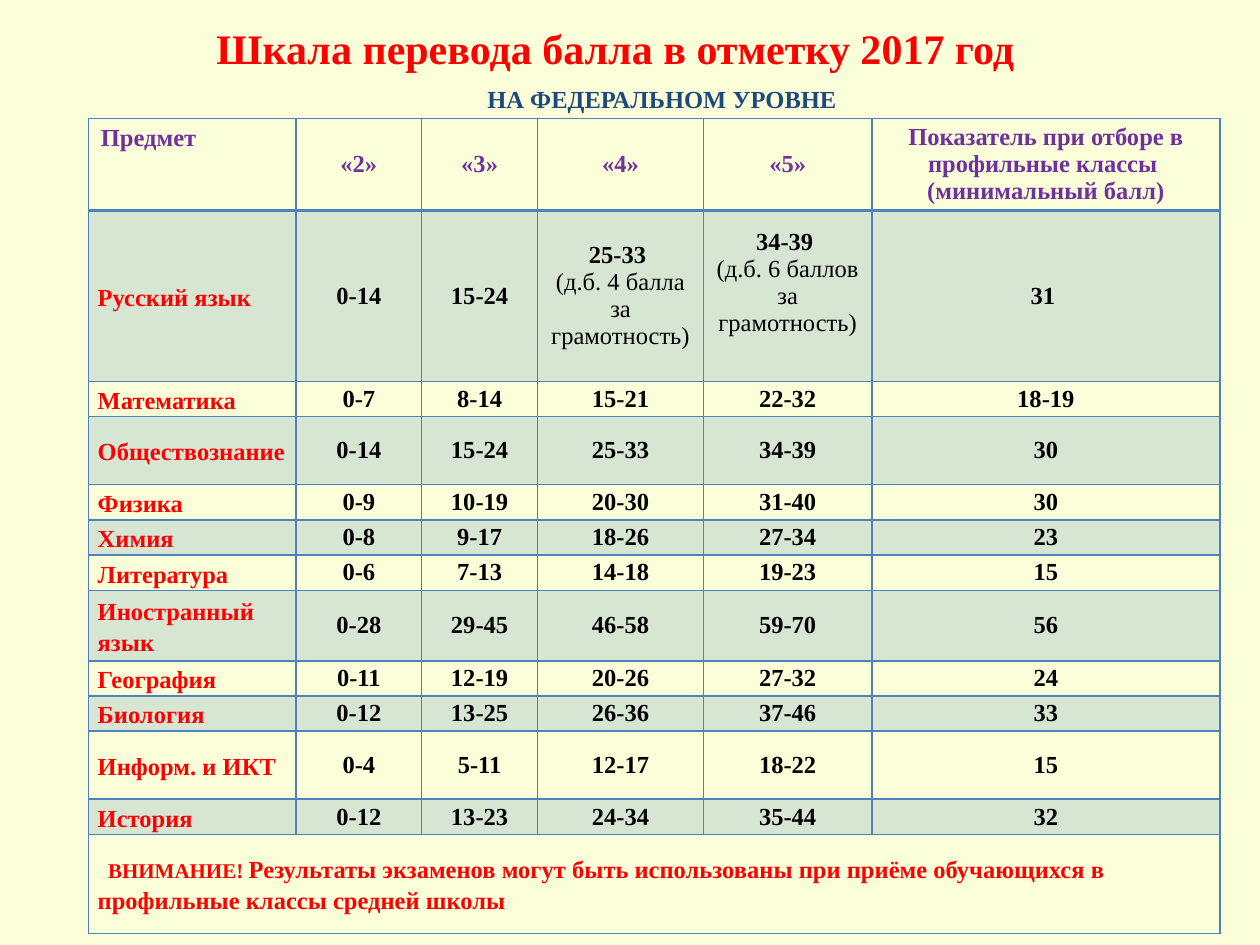
from lxml.etree import SubElement
from pptx import Presentation
from pptx.dml.color import RGBColor
from pptx.enum.text import MSO_ANCHOR, PP_ALIGN
from pptx.oxml.ns import qn
from pptx.util import Cm, Pt

FONT = "Times New Roman"
CREAM = RGBColor(0xFA, 0xFF, 0xD9)
RED = RGBColor(0xFF, 0x00, 0x00)
NAVY = RGBColor(0x1F, 0x49, 0x7D)
PURPLE = RGBColor(0x70, 0x30, 0xA0)
BLUE = RGBColor(0x4F, 0x81, 0xBD)
BLACK = RGBColor(0x00, 0x00, 0x00)

# Content: a cell is one string, or a tuple of paragraphs
TITLE = "Шкала перевода балла в отметку 2017 год"
SUBTITLE = "НА ФЕДЕРАЛЬНОМ УРОВНЕ"
HEADER = ["Предмет", "«2»", "«3»", "«4»", "«5»",
          ("Показатель при отборе в профильные классы ", "(минимальный балл)")]
SUBJECTS = [
    ["Русский язык", "0-14", "15-24",
     ("25-33 ", "(д.б. 4 балла за грамотность)"),
     ("34-39 ", "(д.б. 6 баллов за грамотность)"), "31 "],
    ["Математика", "0-7", "8-14", "15-21", "22-32", "18-19"],
    ["Обществознание", "0-14", "15-24", "25-33", "34-39", "30"],
    ["Физика", "0-9", "10-19", "20-30", "31-40", "30"],
    ["Химия", "0-8", "9-17", "18-26", "27-34", "23"],
    ["Литература", "0-6", "7-13", "14-18", "19-23", "15"],
    ["Иностранный язык", "0-28", "29-45", "46-58", "59-70", "56"],
    ["География", "0-11", "12-19", "20-26", "27-32", "24"],
    ["Биология", "0-12", "13-25", "26-36", "37-46", "33"],
    ["Информ. и ИКТ", "0-4", "5-11", "12-17", "18-22", "15"],
    ["История", "0-12", "13-23", "24-34", "35-44", "32"],
]
WARNING = "ВНИМАНИЕ! "
NOTE = ("Результаты экзаменов могут быть использованы при приёме обучающихся "
        "в профильные классы средней школы")

# Sizes in centimetres
COLUMN_WIDTHS = [4.19, 2.53, 2.34, 3.34, 3.4, 7.01]
SINGLE, DOUBLE = 0.71, 1.37
ROW_HEIGHTS = [1.85, 3.45, SINGLE, DOUBLE, SINGLE, SINGLE, SINGLE, 1.42,
               SINGLE, SINGLE, DOUBLE, SINGLE, 2]


def add_run(paragraph, text, color, size=14, bold=True):
    run = paragraph.add_run()
    run.text = text
    run.font.name = FONT
    run.font.size = Pt(size)
    run.font.bold = bold
    run.font.color.rgb = color


def add_heading(slide, text, box, size, color, anchor):
    frame = slide.shapes.add_textbox(*map(Cm, box)).text_frame
    frame.word_wrap = True
    frame.vertical_anchor = anchor
    paragraph = frame.paragraphs[0]
    paragraph.alignment = PP_ALIGN.CENTER
    add_run(paragraph, text, color, size)


def style_cell(cell, banded, bottom_width):
    properties = cell._tc.get_or_add_tcPr()
    for side, width in (("L", 1), ("R", 1), ("T", 1), ("B", bottom_width)):
        line = SubElement(properties, qn(f"a:ln{side}"), w=str(Pt(width)))
        fill = SubElement(line, qn("a:solidFill"))
        SubElement(fill, qn("a:srgbClr"), val=str(BLUE))
    if banded:
        cell.fill.solid()
        cell.fill.fore_color.rgb = BLUE
        color = properties.find(qn("a:solidFill")).find(qn("a:srgbClr"))
        SubElement(color, qn("a:alpha"), val="20000")
    else:
        cell.fill.background()


def set_margins(cell, side):
    cell.vertical_anchor = MSO_ANCHOR.MIDDLE
    cell.margin_left = cell.margin_right = Cm(side)
    cell.margin_top = cell.margin_bottom = 0


def fill_cell(cell, content, color, centred):
    paragraphs = (content,) if isinstance(content, str) else content
    frame = cell.text_frame
    for index, text in enumerate(paragraphs):
        paragraph = frame.add_paragraph() if index else frame.paragraphs[0]
        if centred:
            paragraph.alignment = PP_ALIGN.CENTER
        # The remark under a score is not bold
        add_run(paragraph, text, color, bold=index == 0 or color == PURPLE)


def main():
    presentation = Presentation()
    presentation.slide_width, presentation.slide_height = Cm(25.4), Cm(19.05)
    slide = presentation.slides.add_slide(presentation.slide_layouts[6])
    slide.background.fill.solid()
    slide.background.fill.fore_color.rgb = CREAM

    # Headings
    add_heading(slide, TITLE, (1.19, 0.41, 22.43, 1.19), 24, RED, MSO_ANCHOR.BOTTOM)
    add_heading(slide, SUBTITLE, (7.92, 1.57, 10.85, 0.86), 14, NAVY, MSO_ANCHOR.TOP)

    # Table grid
    table = slide.shapes.add_table(
        len(ROW_HEIGHTS), len(COLUMN_WIDTHS), Cm(1.78), Cm(2.39),
        Cm(sum(COLUMN_WIDTHS)), Cm(sum(ROW_HEIGHTS))).table
    table.first_row = table.horz_banding = False
    for column, width in zip(table.columns, COLUMN_WIDTHS):
        column.width = Cm(width)
    for row_index, (row, height) in enumerate(zip(table.rows, ROW_HEIGHTS)):
        row.height = Cm(height)
        for cell in row.cells:
            banded = row_index % 2 == 1
            style_cell(cell, banded, 2 if row_index == 0 else 1)

    # Header and subject rows
    for row_index, values in enumerate([HEADER] + SUBJECTS):
        for column_index, content in enumerate(values):
            cell = table.cell(row_index, column_index)
            is_subject = column_index == 0
            if row_index == 0:
                color = PURPLE
            else:
                color = RED if is_subject else BLACK
            fill_cell(cell, content, color, not is_subject)
            if not is_subject:
                set_margins(cell, 0.1)
            elif row_index > 0:
                set_margins(cell, 0.19)
                cell.text_frame.paragraphs[0].line_spacing = 1.15
    table.cell(1, 4).margin_bottom = Cm(0.54)

    # Note across the whole last row
    last = len(ROW_HEIGHTS) - 1
    note = table.cell(last, 0)
    note.merge(table.cell(last, len(COLUMN_WIDTHS) - 1))
    set_margins(note, 0.19)
    paragraph = note.text_frame.paragraphs[0]
    paragraph.line_spacing = 1.15
    paragraph._p.get_or_add_pPr().set("indent", str(Cm(0.21)))
    add_run(paragraph, WARNING, RED, 12)
    add_run(paragraph, NOTE, RED)

    presentation.save("out.pptx")


if __name__ == "__main__":
    main()
